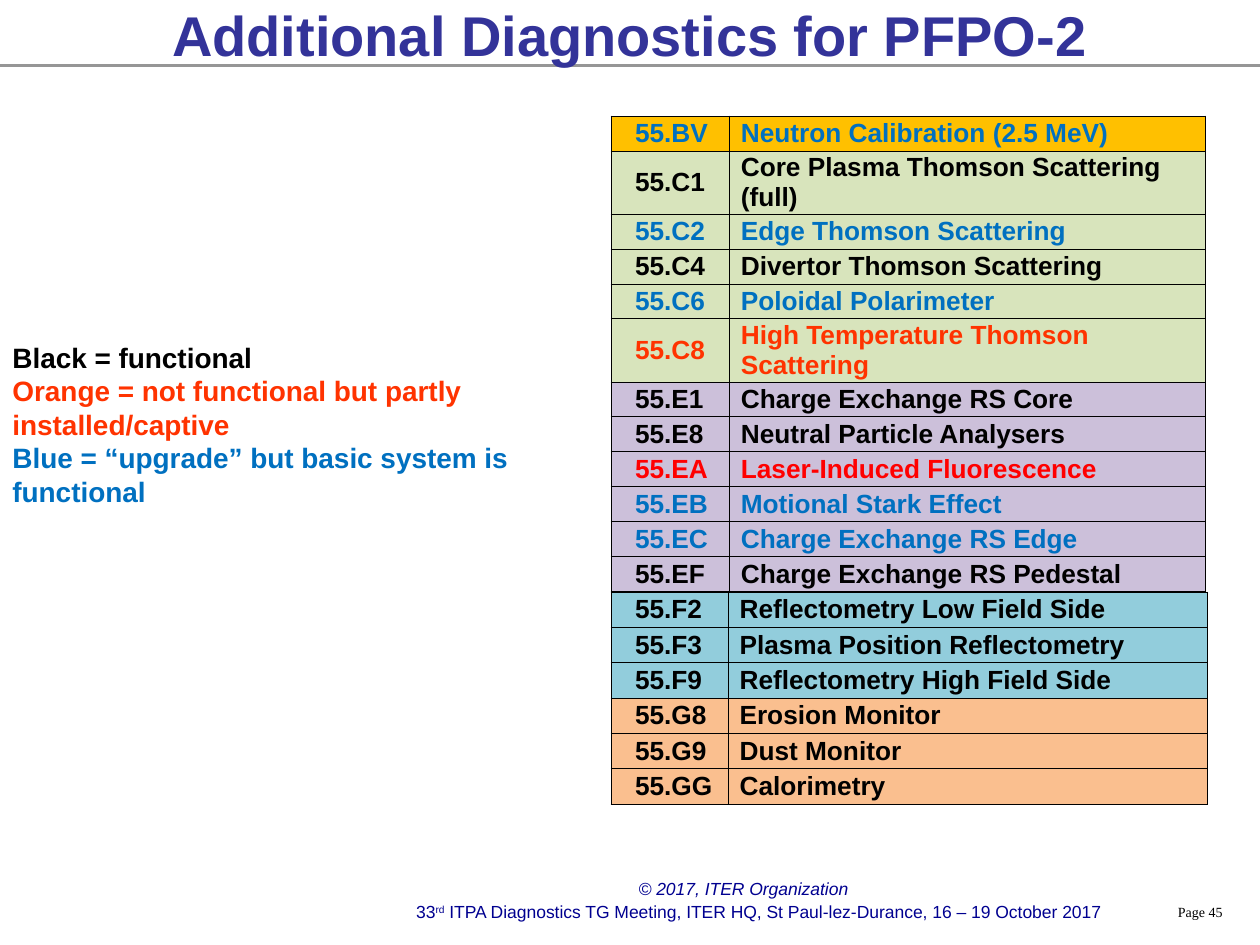
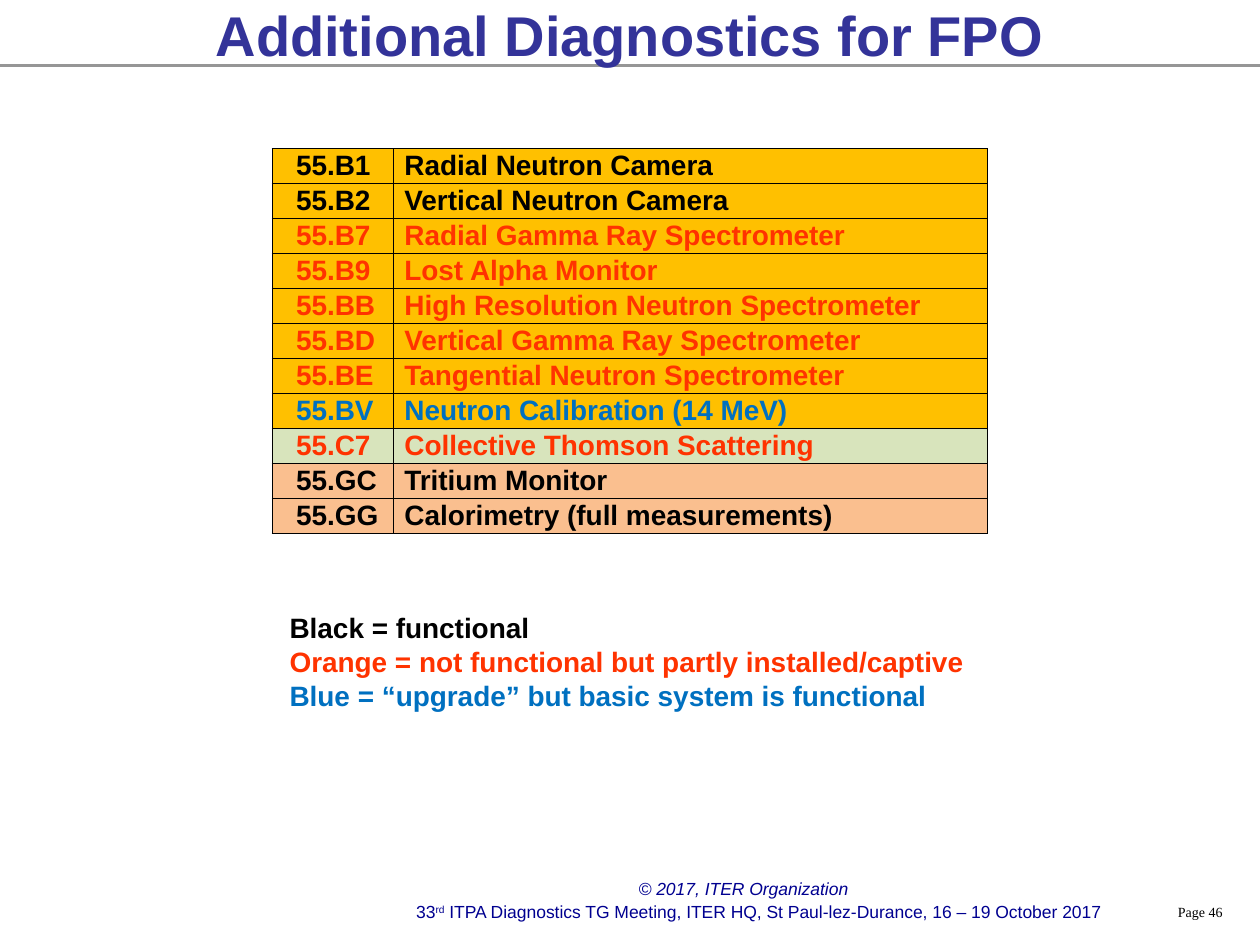
from lxml.etree import SubElement as Sub
from pptx import Presentation as Deck
from pptx.dml.color import RGBColor as RGB
from pptx.enum.shapes import MSO_CONNECTOR as Link
from pptx.enum.text import MSO_ANCHOR as Anchor, PP_ALIGN as Align
from pptx.oxml.ns import qn
from pptx.util import Inches, Pt

HUES = {
    "black": "000000", "orange": "FF3300", "blue": "0070C0", "red": "FF0000",
    "title": "333399", "foot": "000090", "rule": "969696",
}
FILLS = {"B": "FFC000", "C": "D8E4BC", "E": "CCC0DA", "F": "92CDDC", "G": "FABF8F"}

KEY = [
    ("Black = functional", "black"),
    ("Orange = not functional but partly installed/captive", "orange"),
    ("Blue = “upgrade” but basic system is functional", "blue"),
]
MEET = [
    ("33", 0), ("rd", 30000),
    (" ITPA Diagnostics TG Meeting, ITER HQ, St Paul-lez-Durance, 16 – 19 October 2017", 0),
]
SLIDES = [
    {
        "title": "Additional Diagnostics for PFPO-2", "page": 45,
        "key": (0, 2.65, 4.88, 1.45),
        "tables": [
            {"at": (4.85, 0.92), "cols": (0.94, 3.78), "row": 20, "size": 15, "rows": [
                ("BV", "Neutron Calibration (2.5 MeV)", "blue"),
                ("C1", "Core Plasma Thomson Scattering (full)", "black"),
                ("C2", "Edge Thomson Scattering", "blue"),
                ("C4", "Divertor Thomson Scattering", "black"),
                ("C6", "Poloidal Polarimeter", "blue"),
                ("C8", "High Temperature Thomson Scattering", "orange"),
                ("E1", "Charge Exchange RS Core", "black"),
                ("E8", "Neutral Particle Analysers", "black"),
                ("EA", "Laser-Induced Fluorescence", "red"),
                ("EB", "Motional Stark Effect", "blue"),
                ("EC", "Charge Exchange RS Edge", "blue"),
                ("EF", "Charge Exchange RS Pedestal", "black"),
            ]},
            {"at": (4.85, 4.7), "cols": (0.93, 3.8), "row": 20.2, "size": 15, "rows": [
                ("F2", "Reflectometry Low Field Side", "black"),
                ("F3", "Plasma Position Reflectometry", "black"),
                ("F9", "Reflectometry High Field Side", "black"),
                ("G8", "Erosion Monitor", "black"),
                ("G9", "Dust Monitor", "black"),
                ("GG", "Calorimetry", "black"),
            ]},
        ],
    },
    {
        "title": "Additional Diagnostics for FPO", "page": 46,
        "key": (2.2, 4.8, 5.59, 0.91),
        "tables": [
            {"at": (2.16, 1.18), "cols": (0.96, 4.72), "row": 20, "size": 16, "rows": [
                ("B1", "Radial Neutron Camera", "black"),
                ("B2", "Vertical Neutron Camera", "black"),
                ("B7", "Radial Gamma Ray Spectrometer", "orange"),
                ("B9", "Lost Alpha Monitor", "orange"),
                ("BB", "High Resolution Neutron Spectrometer", "orange"),
                ("BD", "Vertical Gamma Ray Spectrometer", "orange"),
                ("BE", "Tangential Neutron Spectrometer", "orange"),
                ("BV", "Neutron Calibration (14 MeV)", "blue"),
                ("C7", "Collective Thomson Scattering", "orange"),
                ("GC", "Tritium Monitor", "black"),
                ("GG", "Calorimetry (full measurements)", "black"),
            ]},
        ],
    },
]

STYLES = {
    "title": {"name": "Arial", "size": Pt(32), "bold": True},
    "key": {"name": "Arial", "size": Pt(16), "bold": True},
    "page": {"name": "Times New Roman", "size": Pt(8)},
    "copy": {"name": "Arial", "size": Pt(10), "italic": True},
    "meet": {"name": "Arial", "size": Pt(10)},
}


def write(para, text, style, hue):
    run = para.add_run()
    run.text = text
    for name, value in style.items():
        setattr(run.font, name, value)
    run.font.color.rgb = RGB.from_string(HUES[hue])
    return run


def add_box(slide, at, align=Align.LEFT, anchor=Anchor.TOP):
    frame = slide.shapes.add_textbox(*map(Inches, at)).text_frame
    frame.word_wrap = True
    frame.vertical_anchor = anchor
    frame.paragraphs[0].alignment = align
    return frame


def add_frame(slide, page):
    rule = slide.shapes.add_connector(
        Link.STRAIGHT, 0, Inches(0.52), Inches(10), Inches(0.52))
    rule.line.color.rgb = RGB.from_string(HUES["rule"])
    rule.line.width = Pt(1.25)
    Sub(rule._element.spPr, qn("a:effectLst"))
    box = add_box(slide, (9.25, 7.12, 0.64, 0.23))
    write(box.paragraphs[0], f"Page {page}", STYLES["page"], "black")
    box = add_box(slide, (4.97, 6.92, 2.08, 0.27))
    write(box.paragraphs[0], "© 2017, ITER Organization", STYLES["copy"], "foot")
    box = add_box(slide, (2.85, 7.1, 6.34, 0.27), Align.CENTER)
    for text, base in MEET:
        run = write(box.paragraphs[0], text, STYLES["meet"], "foot")
        if base:
            run._r.get_or_add_rPr().set("baseline", str(base))


def add_edges(cell):
    props = cell._tc.get_or_add_tcPr()
    for side in "LRTB":
        line = Sub(props, qn(f"a:ln{side}"), w=str(Pt(0.5)))
        Sub(Sub(line, qn("a:solidFill")), qn("a:srgbClr"), val=HUES["black"])


def add_grid(slide, spec):
    rows, cols = spec["rows"], spec["cols"]
    left, top = map(Inches, spec["at"])
    high = Pt(spec["row"])
    grid = slide.shapes.add_table(
        len(rows), len(cols), left, top, Inches(sum(cols)), high * len(rows)).table
    grid.first_row = grid.horz_banding = False
    for col, wide in zip(grid.columns, cols):
        col.width = Inches(wide)
    style = {**STYLES["key"], "size": Pt(spec["size"])}
    for row, (code, name, hue) in zip(grid.rows, rows):
        row.height = high
        for cell, text, inset in zip(row.cells, (f"55.{code}", name), (0.19, 0.09)):
            cell.margin_left = Inches(inset)
            cell.margin_right = cell.margin_top = cell.margin_bottom = 0
            cell.vertical_anchor = Anchor.MIDDLE
            add_edges(cell)
            cell.fill.solid()
            cell.fill.fore_color.rgb = RGB.from_string(FILLS[code[0]])
            write(cell.text_frame.paragraphs[0], text, style, hue)


def add_key(slide, at):
    frame = add_box(slide, at)
    for i, (text, hue) in enumerate(KEY):
        para = frame.add_paragraph() if i else frame.paragraphs[0]
        write(para, text, STYLES["key"], hue)


def main():
    deck = Deck()
    deck.slide_width, deck.slide_height = Inches(10), Inches(7.5)
    for item in SLIDES:
        slide = deck.slides.add_slide(deck.slide_layouts[6])
        add_frame(slide, item["page"])
        for grid in item["tables"]:
            add_grid(slide, grid)
        add_key(slide, item["key"])
        box = add_box(slide, (0, -0.23, 10, 1), Align.CENTER, Anchor.MIDDLE)
        write(box.paragraphs[0], item["title"], STYLES["title"], "title")
    deck.save("out.pptx")


if __name__ == "__main__":
    main()
